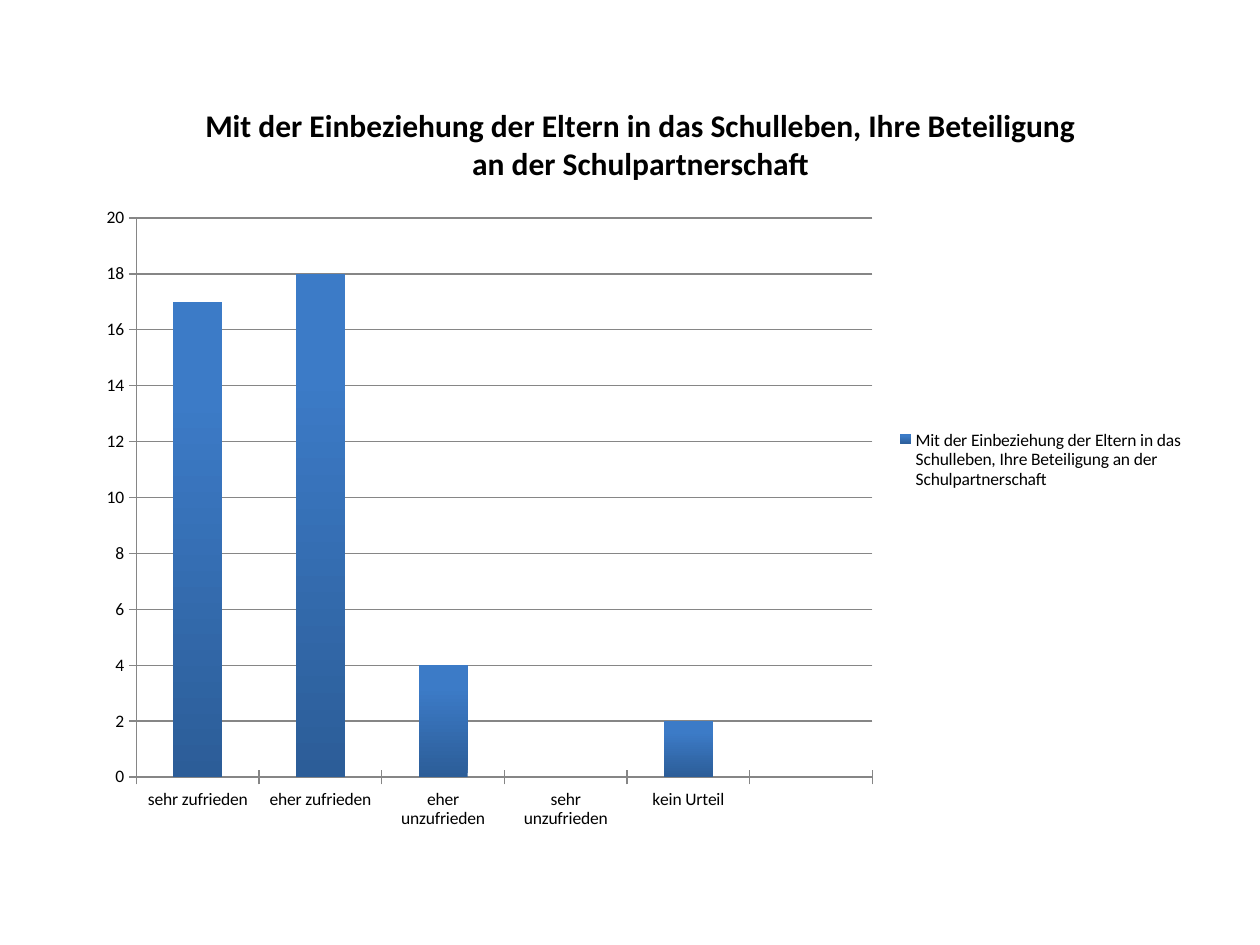
import pptx
import pptx.chart.data
import pptx.dml.color
import pptx.enum.chart
import pptx.util
from pptx.util import Inches

BLACK = pptx.dml.color.RGBColor(0x00, 0x00, 0x00)
GREY = pptx.dml.color.RGBColor(0x86, 0x86, 0x86)
DARK_BLUE = pptx.dml.color.RGBColor(0x2C, 0x5D, 0x98)
BRIGHT_BLUE = pptx.dml.color.RGBColor(0x3C, 0x7B, 0xC7)

FONT = "Calibri"
QUESTION = (
    "Mit der Einbeziehung der Eltern in das Schulleben, "
    "Ihre Beteiligung an der Schulpartnerschaft"
)
# The last category is an empty slot on the axis.
ANSWERS = {
    "sehr zufrieden": 17,
    "eher zufrieden": 18,
    "eher unzufrieden": 4,
    "sehr unzufrieden": 0,
    "kein Urteil": 2,
    "": None,
}


def format_font(font, size, bold=False):
    font.name = FONT
    font.size = pptx.util.Pt(size)
    font.bold = bold
    font.color.rgb = BLACK


def format_line(line):
    line.color.rgb = GREY
    line.width = pptx.util.Pt(0.75)


def format_title(chart, text):
    chart.has_title = True
    frame = chart.chart_title.text_frame
    frame.text = text
    format_font(frame.paragraphs[0].runs[0].font, 18, bold=True)
    chart.chart_title.include_in_layout = False


def format_axes(chart):
    for axis in (chart.category_axis, chart.value_axis):
        axis.major_tick_mark = pptx.enum.chart.XL_TICK_MARK.CROSS
        format_line(axis.format.line)
    value_axis = chart.value_axis
    value_axis.minimum_scale = 0
    value_axis.maximum_scale = 20
    value_axis.major_unit = 2
    value_axis.has_major_gridlines = True
    format_line(value_axis.major_gridlines.format.line)


def format_columns(plot):
    plot.gap_width = 150
    plot.vary_by_categories = False
    fill = plot.series[0].format.fill
    fill.gradient()
    fill.gradient_angle = 90
    stops = zip(fill.gradient_stops, (DARK_BLUE, BRIGHT_BLUE), (0, 0.8))
    for stop, color, position in stops:
        stop.color.rgb = color
        stop.position = position


def add_survey_chart(page, left, top, width, height):
    data = pptx.chart.data.CategoryChartData()
    data.categories = list(ANSWERS)
    data.add_series(QUESTION, list(ANSWERS.values()))
    kind = pptx.enum.chart.XL_CHART_TYPE.COLUMN_CLUSTERED
    chart = page.shapes.add_chart(kind, left, top, width, height, data).chart

    format_font(chart.font, 10)
    format_title(chart, QUESTION)
    format_axes(chart)
    format_columns(chart.plots[0])
    chart.has_legend = True
    chart.legend.position = pptx.enum.chart.XL_LEGEND_POSITION.RIGHT
    chart.legend.include_in_layout = False


def main():
    deck = pptx.Presentation()
    deck.slide_width, deck.slide_height = Inches(10), Inches(7.5)
    page = deck.slides.add_slide(deck.slide_layouts.get_by_name("Blank"))
    add_survey_chart(page, Inches(0.67), Inches(0.6), Inches(8.83), Inches(6.1))
    deck.save("out.pptx")


if __name__ == "__main__":
    main()
